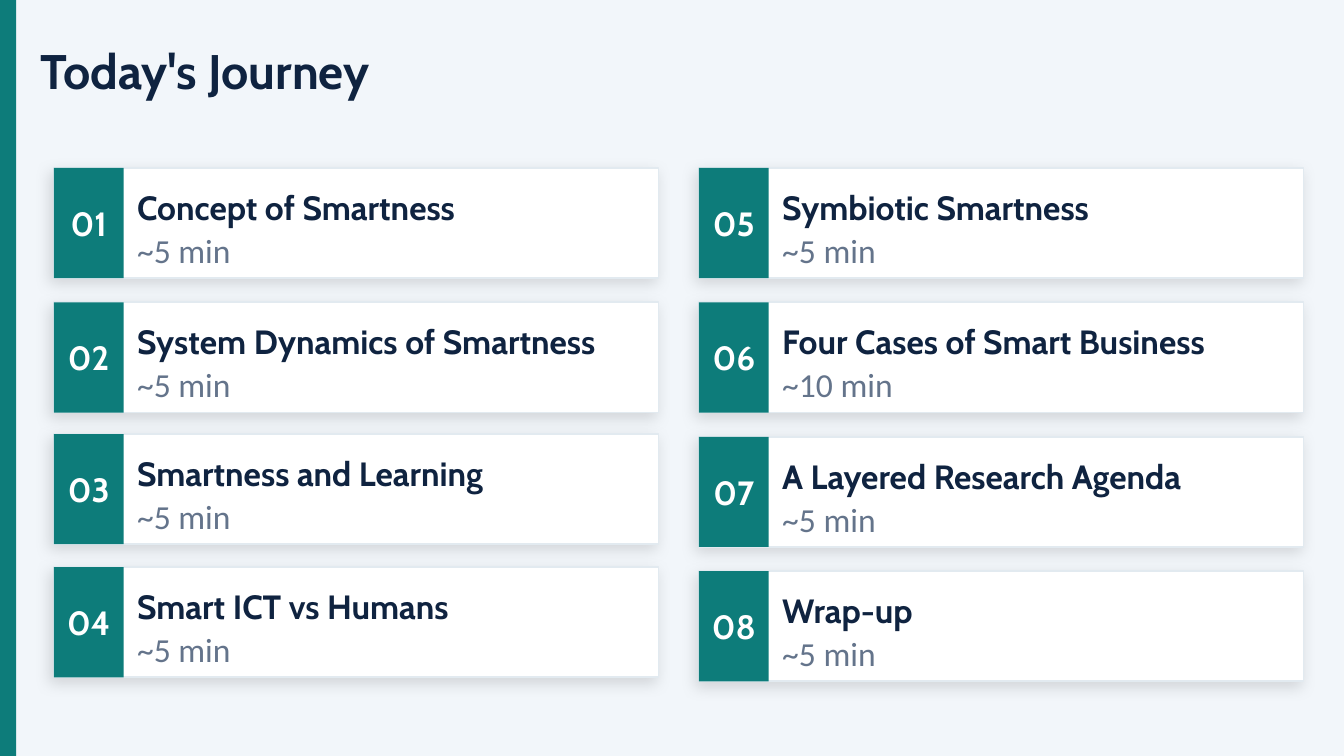
from lxml import etree
from pptx import Presentation
from pptx.dml.color import RGBColor
from pptx.enum.shapes import MSO_SHAPE
from pptx.enum.text import MSO_ANCHOR, PP_ALIGN
from pptx.oxml.ns import qn
from pptx.util import Inches, Pt

RECT = MSO_SHAPE.RECTANGLE
MIDDLE = MSO_ANCHOR.MIDDLE
LEFT, CENTER = PP_ALIGN.LEFT, PP_ALIGN.CENTER

BACKGROUND = RGBColor(0xF2, 0xF6, 0xFA)
TEAL = RGBColor(0x0D, 0x7C, 0x7A)
NAVY = RGBColor(0x0F, 0x23, 0x40)
SLATE = RGBColor(0x64, 0x74, 0x8B)
WHITE = RGBColor(0xFF, 0xFF, 0xFF)
BORDER = RGBColor(0xE2, 0xEA, 0xF0)

TITLE = "Today's Journey"
COLUMNS = [
    [
        ("Concept of Smartness", "~5 min"),
        ("System Dynamics of Smartness", "~5 min"),
        ("Smartness and Learning", "~5 min"),
        ("Smart ICT vs Humans", "~5 min"),
    ],
    [
        ("Symbiotic Smartness", "~5 min"),
        ("Four Cases of Smart Business", "~10 min"),
        ("A Layered Research Agenda", "~5 min"),
        ("Wrap-up", "~5 min"),
    ],
]

HEADING = {"name": "Cabin", "size": Pt(26), "bold": True}
TOPIC = {"name": "Cabin", "size": Pt(18), "bold": True}
DURATION = {"name": "Calibri", "size": Pt(18), "bold": False}

SLIDE_W = 10
SLIDE_H = SLIDE_W * 9 / 16
MARGIN = 0.3
CARD_W, CARD_H = 4.5, 0.82
BADGE_W = 0.52
FIRST_LEFT = 0.4
COLUMN_STEP = CARD_W + MARGIN
ROW_TOPS = [(1.25, 2.25, 3.23, 4.22), (1.25, 2.25, 3.25, 4.25)]
TEXT_INDENT = BADGE_W + 0.1
TEXT_W = CARD_W - TEXT_INDENT - 0.1


def add_rect(s, x, y, w, h, fill):
    sp = s.shapes.add_shape(RECT, Inches(x), Inches(y), Inches(w), Inches(h))
    sp.shadow.inherit = False
    sp.fill.solid()
    sp.fill.fore_color.rgb = fill
    sp.line.fill.background()
    return sp


def add_text(s, x, y, w, h, text, style, color, align=LEFT):
    box = s.shapes.add_textbox(Inches(x), Inches(y), Inches(w), Inches(h))
    tf = box.text_frame
    frame = {"word_wrap": True, "vertical_anchor": MIDDLE, "margin_left": 0,
             "margin_right": 0, "margin_top": 0, "margin_bottom": 0}
    for key, value in frame.items():
        setattr(tf, key, value)
    p = tf.paragraphs[0]
    p.alignment = align
    r = p.add_run()
    r.text = text
    for key, value in style.items():
        setattr(r.font, key, value)
    r.font.color.rgb = color


def add_shadow(sp):
    effects = sp._element.spPr.find(qn("a:effectLst"))
    shadow = etree.SubElement(
        effects, qn("a:outerShdw"), blurRad=str(Pt(8)), dist=str(Pt(3)),
        dir=str(135 * 60000), algn="bl", rotWithShape="0")
    color = etree.SubElement(shadow, qn("a:srgbClr"), val="000000")
    etree.SubElement(color, qn("a:alpha"), val="12000")


def add_card(s, x, y, number, topic, duration):
    card = add_rect(s, x, y, CARD_W, CARD_H, WHITE)
    card.line.color.rgb = BORDER
    card.line.width = Pt(1)
    add_shadow(card)
    add_rect(s, x, y, BADGE_W, CARD_H, TEAL)
    add_text(s, x, y + 0.2, BADGE_W, 0.42, f"{number:02}", TOPIC, WHITE, CENTER)
    add_text(s, x + TEXT_INDENT, y + 0.1, TEXT_W, 0.38, topic, TOPIC, NAVY)
    add_text(s, x + TEXT_INDENT, y + 0.47, TEXT_W, 0.28, duration, DURATION, SLATE)


def main():
    prs = Presentation()
    prs.slide_width, prs.slide_height = Inches(SLIDE_W), Inches(SLIDE_H)
    s = prs.slides.add_slide(prs.slide_layouts[6])
    s.background.fill.solid()
    s.background.fill.fore_color.rgb = BACKGROUND
    add_rect(s, 0, 0, 0.12, SLIDE_H, TEAL)
    add_text(s, MARGIN, 0.22, SLIDE_W - 2 * MARGIN, 0.6, TITLE, HEADING, NAVY)
    number = 1
    for column, (topics, tops) in enumerate(zip(COLUMNS, ROW_TOPS)):
        x = FIRST_LEFT + column * COLUMN_STEP
        for (topic, duration), y in zip(topics, tops):
            add_card(s, x, y, number, topic, duration)
            number += 1
    prs.save("out.pptx")


if __name__ == "__main__":
    main()
